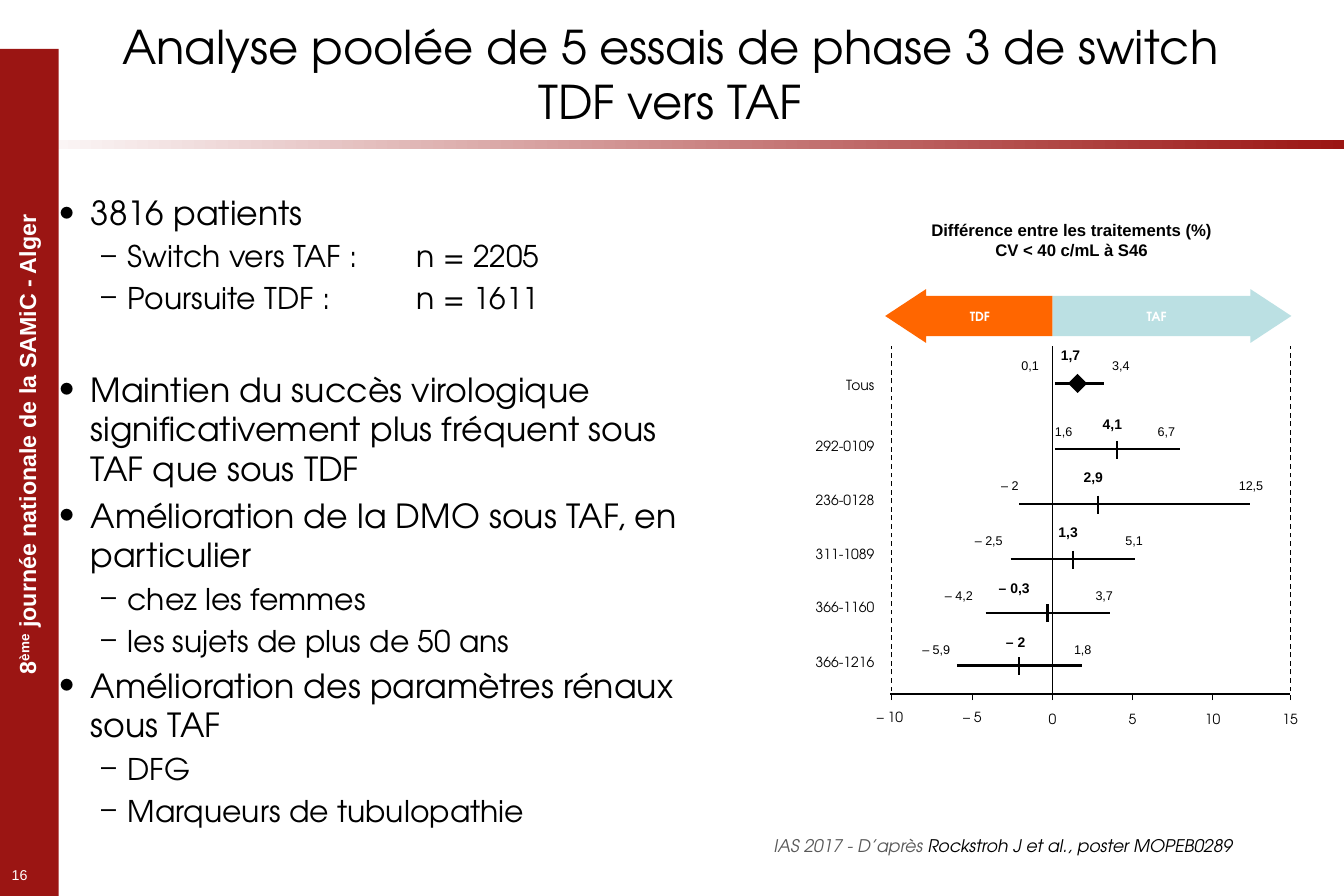
"""Slide on the pooled analysis of five TDF to TAF switch trials."""
from dataclasses import dataclass

from lxml.etree import SubElement
from pptx import Presentation
from pptx.dml.color import RGBColor
from pptx.enum.dml import MSO_LINE
from pptx.enum.shapes import MSO_CONNECTOR, MSO_SHAPE
from pptx.enum.text import MSO_ANCHOR, PP_ALIGN
from pptx.oxml.ns import qn
from pptx.util import Inches, Pt


@dataclass(frozen=True)
class Theme:
    red: str = "9B1513"
    white: str = "FFFFFF"
    black: str = "000000"
    grey: str = "595959"
    orange: str = "FF6600"
    blue: str = "BBE0E3"
    sans: str = "Arial"
    round: str = "TeX Gyre Adventor"
    title: float = 28
    body: float = 20
    sub: float = 18
    side: float = 14
    source: float = 10.5
    head: float = 10.1
    page: float = 8.6
    label: float = 8.4
    small: float = 7.6


theme = Theme()
left, center, right = PP_ALIGN.LEFT, PP_ALIGN.CENTER, PP_ALIGN.RIGHT
top, middle = MSO_ANCHOR.TOP, MSO_ANCHOR.MIDDLE

deck = Presentation()
deck.slide_width, deck.slide_height = Inches(11.25), Inches(7.5)
slide = deck.slides.add_slide(deck.slide_layouts[6])
shapes = slide.shapes


def write(shape, text, size, face, color=theme.black, bold=False, align=left,
          anchor=top, pad=(0, 0, 0, 0), wrap=False):
    frame = shape.text_frame
    frame.text = text
    frame.word_wrap = wrap
    frame.vertical_anchor = anchor
    (frame.margin_left, frame.margin_top,
     frame.margin_right, frame.margin_bottom) = [Inches(side) for side in pad]
    for para in frame.paragraphs:
        para.alignment = align
        for run in para.runs:
            run.font.size, run.font.name, run.font.bold = Pt(size), face, bold
            run.font.color.rgb = RGBColor.from_string(color)
    return frame


def rule(x1, y1, x2, y2, weight=0.75):
    line = shapes.add_connector(MSO_CONNECTOR.STRAIGHT, Inches(x1), Inches(y1), Inches(x2), Inches(y2))
    line.line.width = Pt(weight)
    line.line.color.rgb = RGBColor.from_string(theme.black)
    SubElement(line._element.spPr, qn("a:effectLst"))
    return line


inset = (0.1, 0.05, 0.1, 0.05)

band = shapes.add_shape(MSO_SHAPE.RECTANGLE, 0, Inches(1.17), Inches(11.25), Inches(0.08))
band.shadow.inherit = False
band.line.fill.background()
band.fill.gradient()
band.fill.gradient_angle = 0
for stop, color in zip(band.fill.gradient_stops, (theme.white, theme.red)):
    stop.color.rgb = RGBColor.from_string(color)

strip = shapes.add_shape(MSO_SHAPE.RECTANGLE, 0, Inches(0.41), Inches(0.49), Inches(7.09))
strip.shadow.inherit = False
strip.line.fill.background()
strip.fill.solid()
strip.fill.fore_color.rgb = RGBColor.from_string(theme.red)

event = shapes.add_textbox(Inches(-1.82), Inches(3.55), Inches(4.1), Inches(0.34))
event.rotation = 270
frame = write(event, "8", theme.side, theme.sans, theme.white, True, center, pad=inset)
for text, base in (("ème", "30000"), (" journée nationale de la SAMiC - Alger", "0")):
    run = frame.paragraphs[0].add_run()
    run.text = text
    run.font.size, run.font.name, run.font.bold = Pt(theme.side), theme.sans, True
    run.font.color.rgb = RGBColor.from_string(theme.white)
    run.font._element.set("baseline", base)

page = shapes.add_textbox(0, Inches(7.2), Inches(0.46), Inches(0.24))
write(page, "16", theme.page, theme.sans, theme.white, pad=inset, wrap=True)

title = shapes.add_textbox(Inches(0.82), Inches(0.18), Inches(9.58), Inches(0.87))
write(title, "Analyse poolée de 5 essais de phase 3 de switch TDF vers TAF",
      theme.title, theme.round, align=center, anchor=middle, pad=inset, wrap=True)

points = [
    (0, "3816 patients", 0),
    (1, "Switch vers TAF : \tn = 2205", 3.6),
    (1, "Poursuite TDF : \tn = 1611", 3.6),
    (0, "Maintien du succès virologique significativement plus fréquent sous TAF que sous TDF", 32),
    (0, "Amélioration de la DMO sous TAF, en particulier", 4),
    (1, "chez les femmes", 3.6),
    (1, "les sujets de plus de 50 ans", 3.6),
    (0, "Amélioration des paramètres rénaux sous TAF", 4),
    (1, "DFG", 3.6),
    (1, "Marqueurs de tubulopathie", 3.6),
]
levels = [("•", 0.27, 0.27, theme.body), ("–", 0.58, 0.22, theme.sub)]
body = shapes.add_textbox(Inches(0.39), Inches(1.56), Inches(5.49), Inches(5.45))
frame = write(body, "\n".join(text for _, text, _ in points), theme.body,
              theme.round, pad=inset, wrap=True)
for para, (level, text, gap) in zip(frame.paragraphs, points):
    mark, indent, hang, size = levels[level]
    props = para._p.get_or_add_pPr()
    props.set("marL", str(Inches(indent)))
    props.set("indent", str(-Inches(hang)))
    SubElement(props, qn("a:buFont")).set("typeface", theme.round)
    SubElement(props, qn("a:buChar")).set("char", mark)
    if "\t" in text:
        tab = SubElement(SubElement(props, qn("a:tabLst")), qn("a:tab"))
        tab.set("pos", str(Inches(3)))
        tab.set("algn", "l")
    para.level = level
    para.space_before = Pt(gap)
    for run in para.runs:
        run.font.size = Pt(size)

source = shapes.add_textbox(Inches(6.38), Inches(6.94), Inches(4.65), Inches(0.5))
frame = write(source, "IAS 2017 - D’après ", theme.source, theme.round, theme.grey, pad=inset, wrap=True)
run = frame.paragraphs[0].add_run()
run.text = "Rockstroh J et al., poster MOPEB0289"
run.font.size, run.font.name = Pt(theme.source), theme.round
run.font.color.rgb = RGBColor.from_string(theme.black)
for run in frame.paragraphs[0].runs:
    run.font.italic = True

head = shapes.add_textbox(Inches(7.53), Inches(1.77), Inches(2.88), Inches(0.47))
write(head, "Différence entre les traitements (%)\nCV < 40 c/mL à S46",
      theme.head, theme.sans, bold=True, align=center, anchor=middle, pad=inset)

arrows = [
    (MSO_SHAPE.RIGHT_ARROW, 8.81, 2, "TAF", theme.blue, inset),
    (MSO_SHAPE.LEFT_ARROW, 7.41, 1.4, "TDF", theme.orange, (0.1, 0.05, 0.17, 0.05)),
]
for kind, x, width, text, color, pad in arrows:
    arrow = shapes.add_shape(kind, Inches(x), Inches(2.42), Inches(width), Inches(0.45))
    arrow.adjustments[0], arrow.adjustments[1] = 0.75, 0.76
    arrow.shadow.inherit = False
    arrow.line.fill.background()
    arrow.fill.solid()
    arrow.fill.fore_color.rgb = RGBColor.from_string(color)
    write(arrow, text, theme.small, theme.round, theme.white, True, center, middle, pad)

for x in (7.46, 10.8):
    rule(x, 5.86, x, 2.9).line.dash_style = MSO_LINE.DASH
rule(8.81, 5.86, 8.81, 2.9)
rule(7.45, 5.81, 10.8, 5.81)
for x in (8.14, 9.48, 10.15):
    rule(x, 5.86, x, 5.81)

ticks = [("– 10", 7.45, 5.94), ("– 5", 8.14, 5.94), ("0", 8.81, 5.96),
         ("5", 9.48, 5.96), ("10", 10.15, 5.96), ("15", 10.8, 5.96)]
for text, x, y in ticks:
    box = shapes.add_textbox(Inches(x - 0.13), Inches(y), Inches(0.26), Inches(0.14))
    frame = write(box, text, theme.label, theme.round, align=center, anchor=middle)
    frame.paragraphs[0].line_spacing = 0.9

trials = [
    ("Tous", 3.16, 3.21, 8.83, 9.02, 9.24, ("0,1", 8.55), ("1,7", 8.88), ("3,4", 9.31), 3, 2.9),
    ("292-0109", 3.67, 3.76, 8.83, 9.35, 9.88, ("1,6", 8.83), ("4,1", 9.23), ("6,7", 9.69), 3.55, 3.48),
    ("236-0128", 4.12, 4.22, 8.53, 9.19, 10.46, ("– 2", 8.38), ("2,9", 9.07), ("12,5", 10.37), 4, 3.92),
    ("311-1089", 4.58, 4.68, 8.46, 8.98, 9.5, ("– 2,5", 8.16), ("1,3", 8.86), ("5,1", 9.42), 4.46, 4.38),
    ("366-1160", 5.02, 5.13, 8.25, 8.77, 9.29, ("– 4,2", 7.91), ("– 0,3", 8.36), ("3,7", 9.17), 4.92, 4.85),
    ("366-1216", 5.48, 5.57, 8.01, 8.53, 9.06, ("– 5,9", 7.72), ("– 2", 8.42), ("1,8", 8.99), 5.37, 5.3),
]
for name, high, y, start, mean, end, low, mid, up, side, peak in trials:
    box = shapes.add_textbox(Inches(6.76), Inches(high), Inches(0.56), Inches(0.14))
    frame = write(box, name, theme.label, theme.round, align=right, anchor=middle)
    frame.paragraphs[0].line_spacing = 0.9
    rule(start, y, end, y, 1.5)
    if name == "Tous":
        gem = shapes.add_shape(MSO_SHAPE.DIAMOND, Inches(mean - 0.08), Inches(y - 0.08), Inches(0.16), Inches(0.16))
        gem.shadow.inherit = False
        gem.line.fill.background()
        gem.fill.solid()
        gem.fill.fore_color.rgb = RGBColor.from_string(theme.black)
    else:
        rule(mean, y - 0.07, mean, y + 0.08, 1.5)
    for (text, x), place, size, bold in ((low, side, theme.small, False), (mid, peak, theme.label, True),
                                         (up, side, theme.small, False)):
        width = {3: 0.18, 4: 0.23, 5: 0.28}[len(text)]
        box = shapes.add_textbox(Inches(x), Inches(place), Inches(width), Inches(0.14))
        write(box, text, size, theme.sans, bold=bold)

deck.save("out.pptx")
